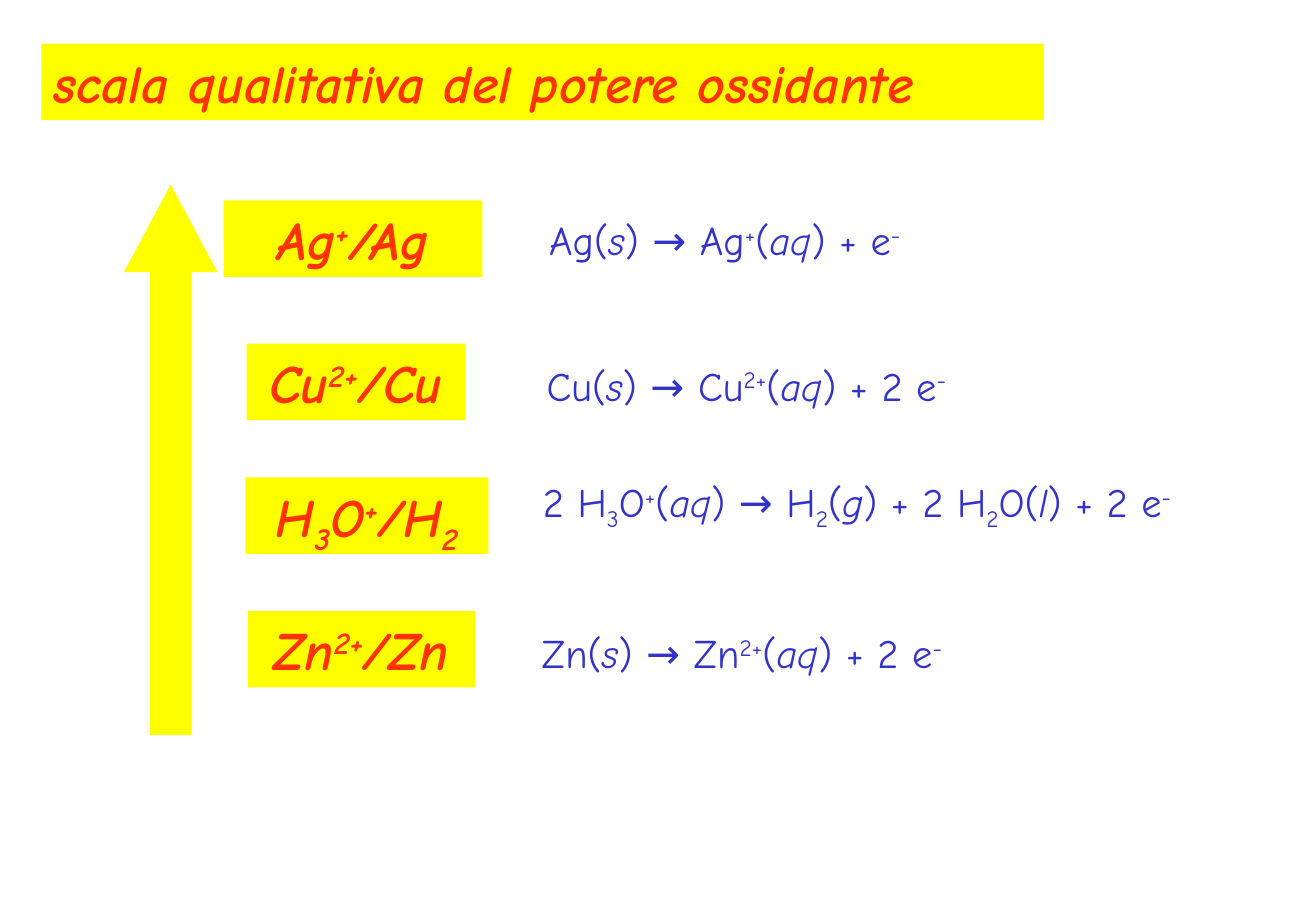
from pptx import Presentation
from pptx.dml.color import RGBColor
from pptx.enum.shapes import MSO_SHAPE
from pptx.enum.text import MSO_ANCHOR, PP_ALIGN
from pptx.util import Inches, Pt

COLORS = {"yellow": "FFFF00", "red": "FF3300", "blue": "3333CC"}
BASELINES = {"^": "30000", "_": "-25000"}


def add_block(shape, left, top, width, height):
    s = slide.shapes.add_shape(shape, Inches(left), Inches(top), Inches(width), Inches(height))
    s.shadow.inherit = False
    s.fill.solid()
    s.fill.fore_color.rgb = RGBColor.from_string(COLORS["yellow"])
    s.line.fill.background()
    return s


def write_formula(s, formula, size, color, emphasis=False, align=PP_ALIGN.LEFT):
    tf = s.text_frame
    tf.word_wrap = True
    tf.vertical_anchor = MSO_ANCHOR.TOP
    p = tf.paragraphs[0]
    p.alignment = align
    for part in formula.split("|"):
        mark = part[0]
        r = p.add_run()
        r.text = part[1:] if mark in "^_~" else part
        r.font.name = "Comic Neue"
        r.font.size = Pt(size)
        r.font.bold = emphasis
        r.font.italic = emphasis or mark == "~"
        r.font.color.rgb = RGBColor.from_string(COLORS[color])
        if mark in BASELINES:
            r.font._element.set("baseline", BASELINES[mark])


prs = Presentation()
prs.slide_width = Inches(10.83)
prs.slide_height = Inches(7.5)
slide = prs.slides.add_slide(prs.slide_layouts[6])

title = add_block(MSO_SHAPE.RECTANGLE, 0.34, 0.36, 8.25, 0.63)
write_formula(title, "scala qualitativa del potere ossidante", 32, "red", True)

arrow = add_block(MSO_SHAPE.UP_ARROW, 1.02, 1.52, 0.77, 4.53)
arrow.adjustments[0] = 0.445
arrow.adjustments[1] = 0.936

couples = [
    ("Ag|^+|/Ag", 1.84, 1.65, 2.13),
    ("Cu|^2+|/Cu", 2.03, 2.83, 1.8),
    ("H|_3|O|^+|/H|_2", 2.02, 3.93, 2),
    ("Zn|^2+|/Zn", 2.04, 5.03, 1.87),
]
for formula, left, top, width in couples:
    s = add_block(MSO_SHAPE.RECTANGLE, left, top, width, 0.63)
    write_formula(s, formula, 32, "red", True, PP_ALIGN.CENTER)

reactions = [
    ("Ag(|~s|) → Ag|^+|(|~aq|) + e|^-", 4.42, 1.72, 5.32),
    ("Cu(|~s|) → Cu|^2+|(|~aq|) + 2 e|^-", 4.4, 2.92, 5.32),
    ("2 H|_3|O|^+|(|~aq|) → H|_2|(|~g|) + 2 H|_2|O(|~l|) + 2 e|^-", 4.37, 3.88, 6.46),
    ("Zn(|~s|) → Zn|^2+|(|~aq|) + 2 e|^-", 4.36, 5.12, 5.41),
]
for formula, left, top, width in reactions:
    s = slide.shapes.add_textbox(Inches(left), Inches(top), Inches(width), Inches(0.5))
    write_formula(s, formula, 24, "blue")

prs.save("out.pptx")
